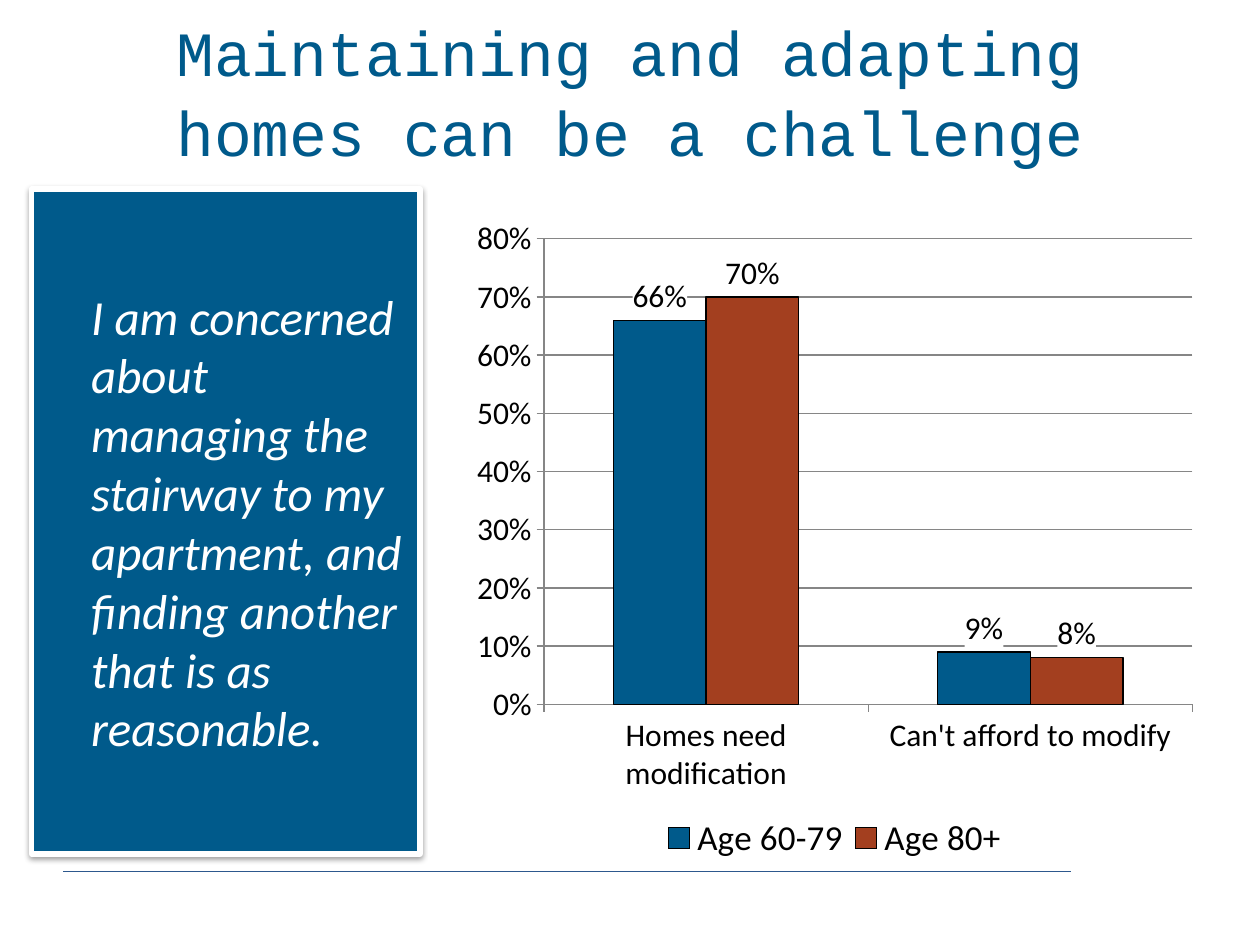
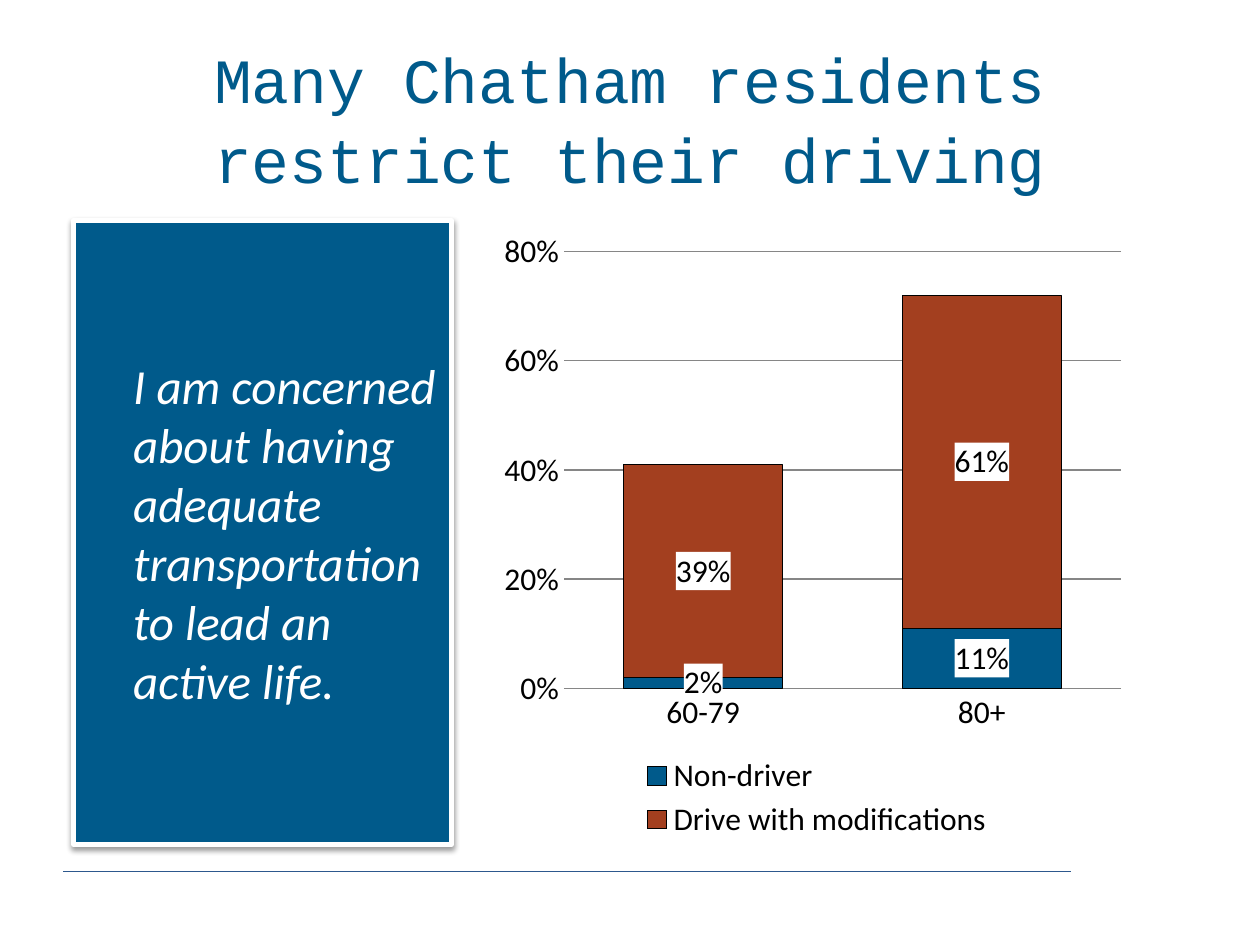
import pptx
import pptx.chart.data
import pptx.dml.color
import pptx.enum.chart
import pptx.enum.shapes
import pptx.enum.text
import pptx.oxml
import pptx.oxml.ns
import pptx.util

Pt = pptx.util.Pt
qn = pptx.oxml.ns.qn
xl = pptx.enum.chart

COLORS = {
    "blue": "005A8B",
    "rust": "A33F1F",
    "rule": "2D588D",
    "grid": "868686",
    "white": "FFFFFF",
    "black": "000000",
}
TITLE_FONT = "Courier New"
BODY_FONT = "Calibri"
PLOT_AREA = (0.11, 0.05, 0.87, 0.7)
NS = ('xmlns:a="http://schemas.openxmlformats.org/drawingml/2006/main" '
      'xmlns:c="http://schemas.openxmlformats.org/drawingml/2006/chart"')


def rgb(name):
    return pptx.dml.color.RGBColor.from_string(COLORS[name])


def set_line(line, color, width):
    line.color.rgb = rgb(color)
    line.width = Pt(width)


def add_run(p, text, font, size, color, italic=False):
    r = p.add_run()
    r.text = text
    r.font.name = font
    r.font.size = Pt(size)
    r.font.color.rgb = rgb(color)
    r.font.italic = italic


def add_footer_rule(s):
    rule = s.shapes.add_connector(
        pptx.enum.shapes.MSO_CONNECTOR.STRAIGHT, Pt(36), Pt(498), Pt(612), Pt(498))
    set_line(rule.line, "rule", 0.5)
    rule._element.spPr.append(pptx.oxml.parse_xml(f"<a:effectLst {NS}/>"))


def add_title(s, text, top):
    sp = s.shapes.add_textbox(Pt(36), Pt(top), Pt(648), Pt(90))
    tf = sp.text_frame
    tf.word_wrap = True
    tf.vertical_anchor = pptx.enum.text.MSO_ANCHOR.MIDDLE
    p = tf.paragraphs[0]
    p.alignment = pptx.enum.text.PP_ALIGN.CENTER
    p.line_spacing = 1.06
    add_run(p, text, TITLE_FONT, 36, "blue")


def add_quote_panel(s, text, left, top, width, height):
    sp = s.shapes.add_shape(pptx.enum.shapes.MSO_SHAPE.RECTANGLE,
                            Pt(left), Pt(top), Pt(width), Pt(height))
    sp.fill.solid()
    sp.fill.fore_color.rgb = rgb("blue")
    set_line(sp.line, "white", 3)
    sp.shadow.inherit = False
    sp._element.spPr.find(qn("a:effectLst")).append(pptx.oxml.parse_xml(
        f'<a:outerShdw {NS} blurRad="{Pt(3.1)}" dist="{Pt(1.6)}" dir="5400000" '
        f'rotWithShape="0"><a:srgbClr val="{COLORS["black"]}">'
        '<a:alpha val="38000"/></a:srgbClr></a:outerShdw>'))
    tf = sp.text_frame
    tf.word_wrap = True
    tf.vertical_anchor = pptx.enum.text.MSO_ANCHOR.MIDDLE
    p = tf.paragraphs[0]
    p.alignment = pptx.enum.text.PP_ALIGN.LEFT
    p._p.get_or_add_pPr().set("marL", str(Pt(27)))
    add_run(p, text, BODY_FONT, 28, "white", italic=True)


def layout_xml(box, inner=False):
    """Return a manual chart layout; box holds x, y, w, h as fractions."""
    target = '<c:layoutTarget val="inner"/>' if inner else ""
    sizes = "".join(f'<c:{k} val="{v}"/>' for k, v in zip("xywh", box))
    return pptx.oxml.parse_xml(
        f'<c:layout {NS}><c:manualLayout>{target}<c:xMode val="edge"/>'
        f'<c:yMode val="edge"/>{sizes}</c:manualLayout></c:layout>')


def place_plot(chart):
    area = chart._chartSpace.chart.plotArea
    for old in area.findall(qn("c:layout")):
        area.remove(old)
    area.insert(0, layout_xml(PLOT_AREA, inner=True))


def place_legend(chart, box, size):
    chart.has_legend = True
    legend = chart.legend
    legend.position = xl.XL_LEGEND_POSITION.BOTTOM
    legend.include_in_layout = False
    legend.font.size = Pt(size)
    el = legend._element
    for old in el.findall(qn("c:layout")):
        el.remove(old)
    el.find(qn("c:legendPos")).addnext(layout_xml(box))


def style_axes(chart, tick, step):
    for axis in (chart.category_axis, chart.value_axis):
        axis.major_tick_mark = tick
        axis.minor_tick_mark = xl.XL_TICK_MARK.NONE
        axis.tick_labels.font.size = Pt(18)
        set_line(axis.format.line, "grid", 0.75)
    values = chart.value_axis
    values.minimum_scale, values.maximum_scale = 0, 0.8
    values.major_unit = step
    values.tick_labels.number_format = "0%"
    values.tick_labels.number_format_is_linked = False
    values.has_major_gridlines = True
    set_line(values.major_gridlines.format.line, "grid", 0.75)


def style_series(series, color, label_position):
    series.format.fill.solid()
    series.format.fill.fore_color.rgb = rgb(color)
    set_line(series.format.line, "black", 0.75)
    labels = series.data_labels
    labels.show_value = True
    labels.number_format = "0%"
    labels.number_format_is_linked = False
    labels.position = label_position
    labels.font.size = Pt(18)
    labels._element.find(qn("c:txPr")).addprevious(pptx.oxml.parse_xml(
        f'<c:spPr {NS}><a:solidFill><a:srgbClr val="{COLORS["white"]}"/>'
        '</a:solidFill></c:spPr>'))


def add_percent_chart(s, kind, box, categories, series, tick, step, gap,
                      label_position, legend_box, legend_size):
    data = pptx.chart.data.CategoryChartData(number_format="0%")
    data.categories = categories
    for name, values in series:
        data.add_series(name, values)
    chart = s.shapes.add_chart(kind, *map(Pt, box), data).chart
    chart.has_title = False
    chart.font.name = BODY_FONT
    chart.font.size = Pt(18)
    chart.font.color.rgb = rgb("black")
    plot = chart.plots[0]
    plot.vary_by_categories = False
    plot.gap_width = gap
    for ser, color in zip(plot.series, ("blue", "rust")):
        style_series(ser, color, label_position)
    style_axes(chart, tick, step)
    place_plot(chart)
    place_legend(chart, legend_box, legend_size)
    return chart


def add_slide(prs, title, title_top):
    s = prs.slides.add_slide(prs.slide_layouts[6])
    add_footer_rule(s)
    add_title(s, title, title_top)
    return s


def add_homes_slide(prs):
    s = add_slide(prs, "Maintaining and adapting homes can be a challenge", 6)
    add_percent_chart(
        s, xl.XL_CHART_TYPE.COLUMN_CLUSTERED, (264, 117.5, 426, 380),
        ["Homes need modification", "Can't afford to modify"],
        [("Age 60-79", (0.66, 0.09)), ("Age 80+", (0.7, 0.08))],
        tick=xl.XL_TICK_MARK.OUTSIDE, step=0.1, gap=150,
        label_position=xl.XL_LABEL_POSITION.OUTSIDE_END,
        legend_box=(0.26, 0.92, 0.48, 0.08), legend_size=20)
    add_quote_panel(
        s, "I am concerned about managing the stairway to my apartment, "
        "and finding another that is as reasonable.", 18, 108, 222, 380)


def add_driving_slide(prs):
    s = add_slide(prs, "Many Chatham residents restrict their driving", 21.5)
    add_quote_panel(
        s, "I am concerned about having adequate transportation "
        "to lead an active life.", 42, 126, 216, 356.5)
    chart = add_percent_chart(
        s, xl.XL_CHART_TYPE.COLUMN_STACKED, (282, 126, 366, 356.5),
        ["60-79", "80+"],
        [("Non-driver", (0.02, 0.11)), ("Drive with modifications", (0.39, 0.61))],
        tick=xl.XL_TICK_MARK.NONE, step=0.2, gap=75,
        label_position=xl.XL_LABEL_POSITION.CENTER,
        legend_box=(0.22, 0.85, 0.57, 0.15), legend_size=18)
    chart.plots[0].overlap = 100
    chart.value_axis.format.line.fill.background()


def main():
    prs = pptx.Presentation()
    prs.slide_width, prs.slide_height = Pt(720), Pt(540)
    add_homes_slide(prs)
    add_driving_slide(prs)
    prs.save("out.pptx")


if __name__ == "__main__":
    main()
